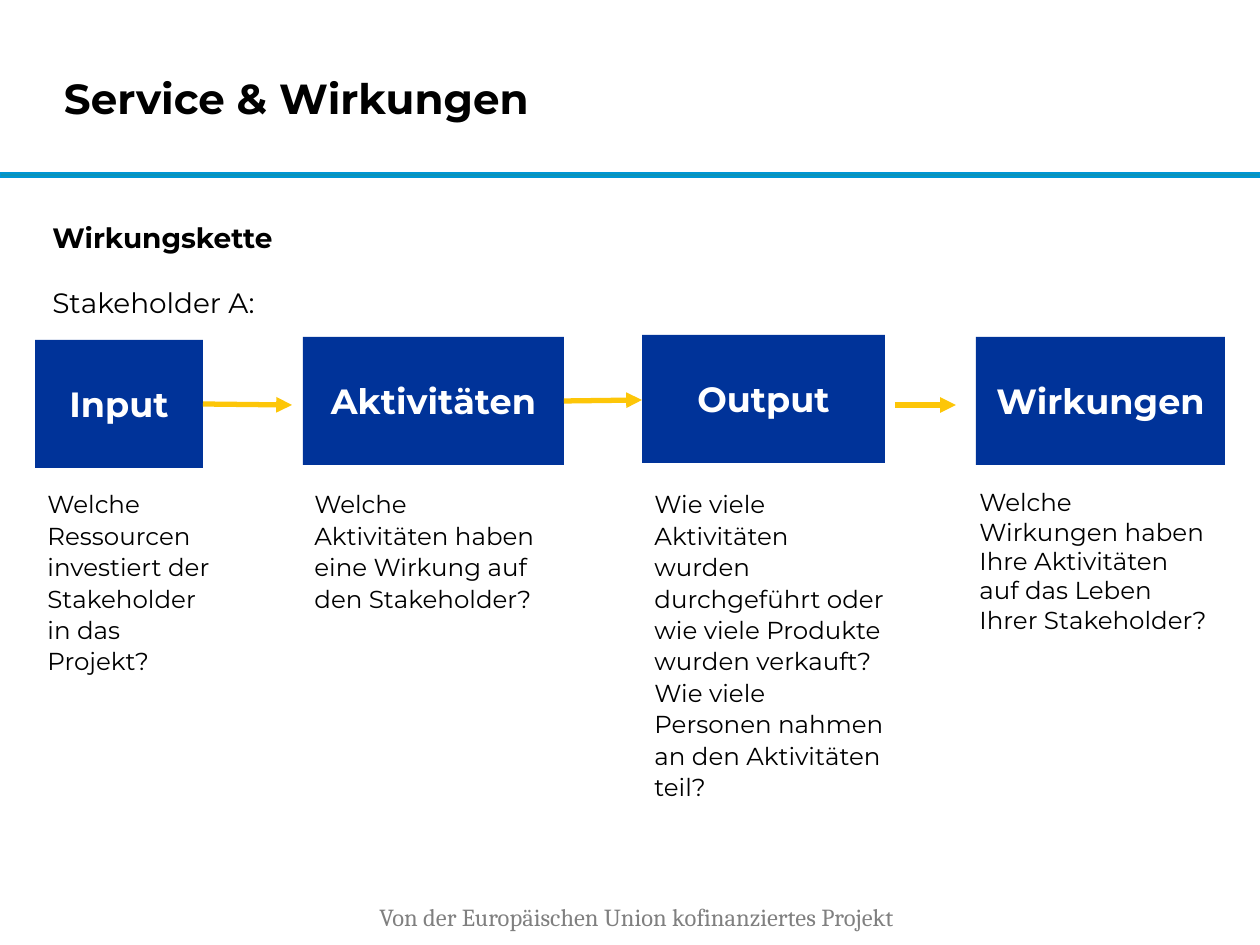
import pptx
import pptx.util
import pptx.dml.color
import pptx.enum.shapes
import pptx.enum.text
import pptx.oxml.ns
import lxml.etree

# Content: lengths in px, 126 to the inch
TITLE = "Service & Wirkungen"
HEADING = "Wirkungskette"
STAKEHOLDER = "Stakeholder A:"
FUNDING = "Von der Europäischen Union kofinanziertes Projekt"
BOX_HEIGHT = 128
QUESTION_TOP, QUESTION_HEIGHT = 481, 203
# label, box (left, top, width), question, question (left, width), line spacing
STAGES = [
    ("Input", (35, 340, 168),
     "Welche Ressourcen investiert der Stakeholder in das Projekt?",
     (35, 197), 1.07),
    ("Aktivitäten", (303, 337, 261),
     "Welche Aktivitäten haben eine Wirkung auf den Stakeholder?",
     (302, 258), 1.07),
    ("Output", (642, 335, 243),
     "Wie viele Aktivitäten wurden durchgeführt oder wie viele Produkte "
     "wurden verkauft? Wie viele Personen nahmen an den Aktivitäten teil?",
     (642, 258), 1.07),
    ("Wirkungen", (976, 337, 249),
     "Welche Wirkungen haben Ihre Aktivitäten auf das Leben Ihrer Stakeholder?",
     (967, 258), None),
]
ARROWS = [(203, 404, 292, 405), (564, 401, 642, 400), (895, 405, 956, 405)]
COLORS = {"text": "000000", "footer": "808080", "label": "FFFFFF",
          "box": "003399", "arrow": "FDC608",
          "rule": "0C94B7", "rule_edge": "0096D3"}

SCALE = 914400 / 126


def px(*lengths):
    return [pptx.util.Emu(round(length * SCALE)) for length in lengths]


def color(key):
    return pptx.dml.color.RGBColor.from_string(COLORS[key])


def write(frame, text, size=14, font="Montserrat", ink="text", bold=False,
          align=pptx.enum.text.PP_ALIGN.LEFT, before=None, spacing=None,
          wrap=True, middle=False, new=False):
    """Put one formatted paragraph into a text frame."""
    paragraph = frame.add_paragraph() if new else frame.paragraphs[0]
    run = paragraph.add_run()
    run.text = text
    run.font.size = pptx.util.Pt(size)
    run.font.name = font
    run.font.bold = bold
    run.font.color.rgb = color(ink)
    paragraph.alignment = align
    if before is not None:
        paragraph.space_before = pptx.util.Pt(before)
    if spacing is not None:
        paragraph.line_spacing = spacing
    frame.word_wrap = wrap
    if middle:
        frame.vertical_anchor = pptx.enum.text.MSO_ANCHOR.MIDDLE


def add_block(shapes, area, fill, edge=None):
    block = shapes.add_shape(pptx.enum.shapes.MSO_SHAPE.RECTANGLE, *px(*area))
    block.shadow.inherit = False
    block.fill.solid()
    block.fill.fore_color.rgb = color(fill)
    if edge:
        block.line.color.rgb = color(edge)
        block.line.width = pptx.util.Pt(1)
    else:
        block.line.fill.background()
    return block


def add_arrow(shapes, ends):
    arrow = shapes.add_connector(pptx.enum.shapes.MSO_CONNECTOR.STRAIGHT, *px(*ends))
    arrow.line.color.rgb = color("arrow")
    arrow.line.width = pptx.util.Pt(3)
    qn = pptx.oxml.ns.qn
    lxml.etree.SubElement(arrow.line._get_or_add_ln(), qn("a:tailEnd"), type="triangle")
    lxml.etree.SubElement(arrow._element.spPr, qn("a:effectLst"))


def main():
    deck = pptx.Presentation()
    deck.slide_width, deck.slide_height = px(1260, 945)
    slide = deck.slides.add_slide(deck.slide_layouts[5])
    shapes = slide.shapes

    # Rule and funding line
    add_block(shapes, (0, 173, 1260, 4), "rule", edge="rule_edge")
    funding = shapes.add_textbox(*px(367, 896, 581, 43))
    write(funding.text_frame, FUNDING, font="Cambria", ink="footer")

    # Title
    title = shapes.title
    title.left, title.top, title.width, title.height = px(64, 23, 916, 150)
    frame = title.text_frame
    frame.auto_size = pptx.enum.text.MSO_AUTO_SIZE.NONE
    frame.margin_left = frame.margin_right = frame.margin_top = frame.margin_bottom = 0
    write(frame, TITLE, size=24, bold=True, middle=True)

    # Heading of the chain
    heading = shapes.add_textbox(*px(40, 214, 263, 112)).text_frame
    write(heading, HEADING, size=16, bold=True, wrap=False)
    write(heading, STAKEHOLDER, size=16, before=18, wrap=False, new=True)

    # Stages with their questions
    for label, box, question, (left, width), spacing in STAGES:
        stage = add_block(shapes, (*box, BOX_HEIGHT), "box")
        write(stage.text_frame, label, size=20, ink="label", bold=True,
              align=pptx.enum.text.PP_ALIGN.CENTER, middle=True)
        note = shapes.add_textbox(*px(left, QUESTION_TOP, width, QUESTION_HEIGHT))
        write(note.text_frame, question, spacing=spacing)

    for ends in ARROWS:
        add_arrow(shapes, ends)

    deck.save("out.pptx")


if __name__ == "__main__":
    main()
